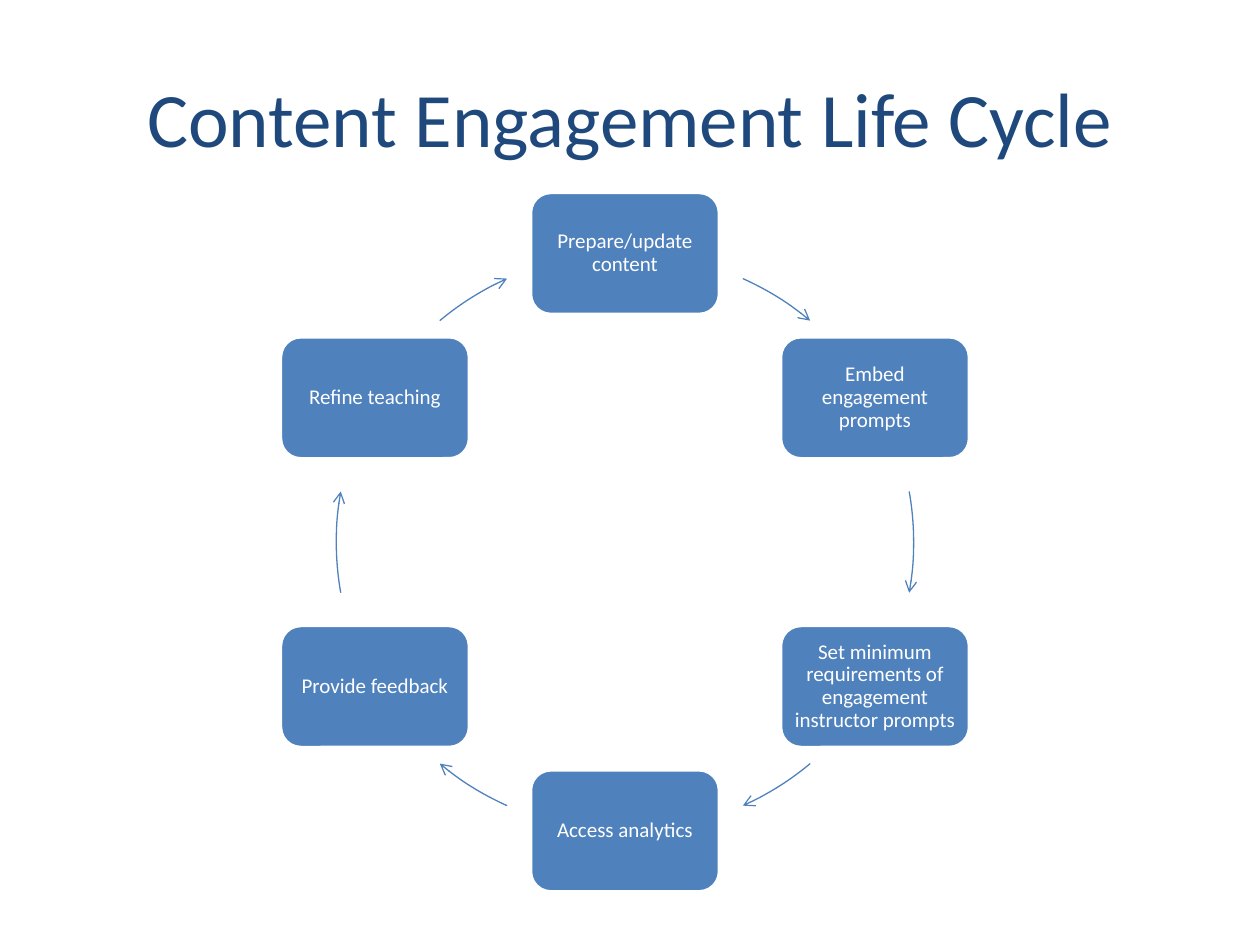
from math import cos, radians, sin

from lxml.etree import SubElement
from pptx import Presentation
from pptx.dml.color import RGBColor
from pptx.enum.shapes import MSO_SHAPE
from pptx.enum.text import MSO_ANCHOR, PP_ALIGN
from pptx.oxml.ns import qn
from pptx.util import Cm, Pt

STEPS = [
    "Prepare/update content",
    "Embed engagement prompts",
    "Set minimum requirements of engagement instructor prompts",
    "Access analytics",
    "Provide feedback",
    "Refine teaching",
]
# Middle angle and half sweep of the arrow after each step, in degrees
ARROWS = [(302, 7.9), (0, 10.1), (58, 7.9), (122, 7.9), (180, 10.1), (238, 7.9)]

# Cycle geometry in centimetres
CENTER_X, CENTER_Y, RADIUS = 12.6, 10.93, 5.82
BOX_W, BOX_H = 3.81, 2.46


def color(value):
    return RGBColor.from_string(value)


class CycleSlide:
    font = "Calibri"
    title_color = "1F497D"
    accent = "4F81BD"
    white = "FFFFFF"

    def __init__(self, prs):
        self.s = prs.slides.add_slide(prs.slide_layouts[5])

    def add_text(self, tf, text, size, font_color):
        tf.word_wrap = True
        tf.vertical_anchor = MSO_ANCHOR.MIDDLE
        p = tf.paragraphs[0]
        p.alignment = PP_ALIGN.CENTER
        r = p.add_run()
        r.text = text
        r.font.name = self.font
        r.font.size = Pt(size)
        r.font.color.rgb = color(font_color)
        return p

    def title(self, text):
        sp = self.s.shapes.title
        sp.left, sp.top, sp.width, sp.height = Cm(1.27), Cm(0.76), Cm(22.86), Cm(3.18)
        self.add_text(sp.text_frame, text, 44, self.title_color)

    def step(self, text, angle):
        x = CENTER_X + RADIUS * cos(radians(angle))
        y = CENTER_Y + RADIUS * sin(radians(angle))
        sp = self.s.shapes.add_shape(
            MSO_SHAPE.ROUNDED_RECTANGLE,
            Cm(x - BOX_W / 2), Cm(y - BOX_H / 2), Cm(BOX_W), Cm(BOX_H))
        sp.shadow.inherit = False
        sp.fill.solid()
        sp.fill.fore_color.rgb = color(self.accent)
        sp.line.color.rgb = color(self.white)
        sp.line.width = Pt(2)
        tf = sp.text_frame
        tf.margin_left = tf.margin_right = tf.margin_top = tf.margin_bottom = Cm(0.13)
        p = self.add_text(tf, text, 12, self.white)
        p.line_spacing = 0.9

    def arrow(self, middle, half):
        sp = self.s.shapes.add_shape(
            MSO_SHAPE.ARC,
            Cm(CENTER_X - RADIUS), Cm(CENTER_Y - RADIUS), Cm(2 * RADIUS), Cm(2 * RADIUS))
        # Arc angles are stored in 1/60000 degree, adjustments in 1/100000
        for i, angle in enumerate((middle - half, middle + half)):
            sp.adjustments[i] = angle % 360 * 0.6
        sp.shadow.inherit = False
        sp.fill.background()
        sp.line.color.rgb = color(self.accent)
        sp.line.width = Pt(0.75)
        SubElement(sp.element.spPr.find(qn("a:ln")), qn("a:tailEnd"), type="arrow")


def main():
    prs = Presentation()
    prs.slide_width, prs.slide_height = Cm(25.4), Cm(19.05)
    slide = CycleSlide(prs)

    # Title
    slide.title("Content Engagement Life Cycle")

    # Steps clockwise from the top, each followed by its arrow
    for i, (text, (middle, half)) in enumerate(zip(STEPS, ARROWS)):
        slide.step(text, -90 + i * 360 / len(STEPS))
        slide.arrow(middle, half)

    prs.save("out.pptx")


if __name__ == "__main__":
    main()
